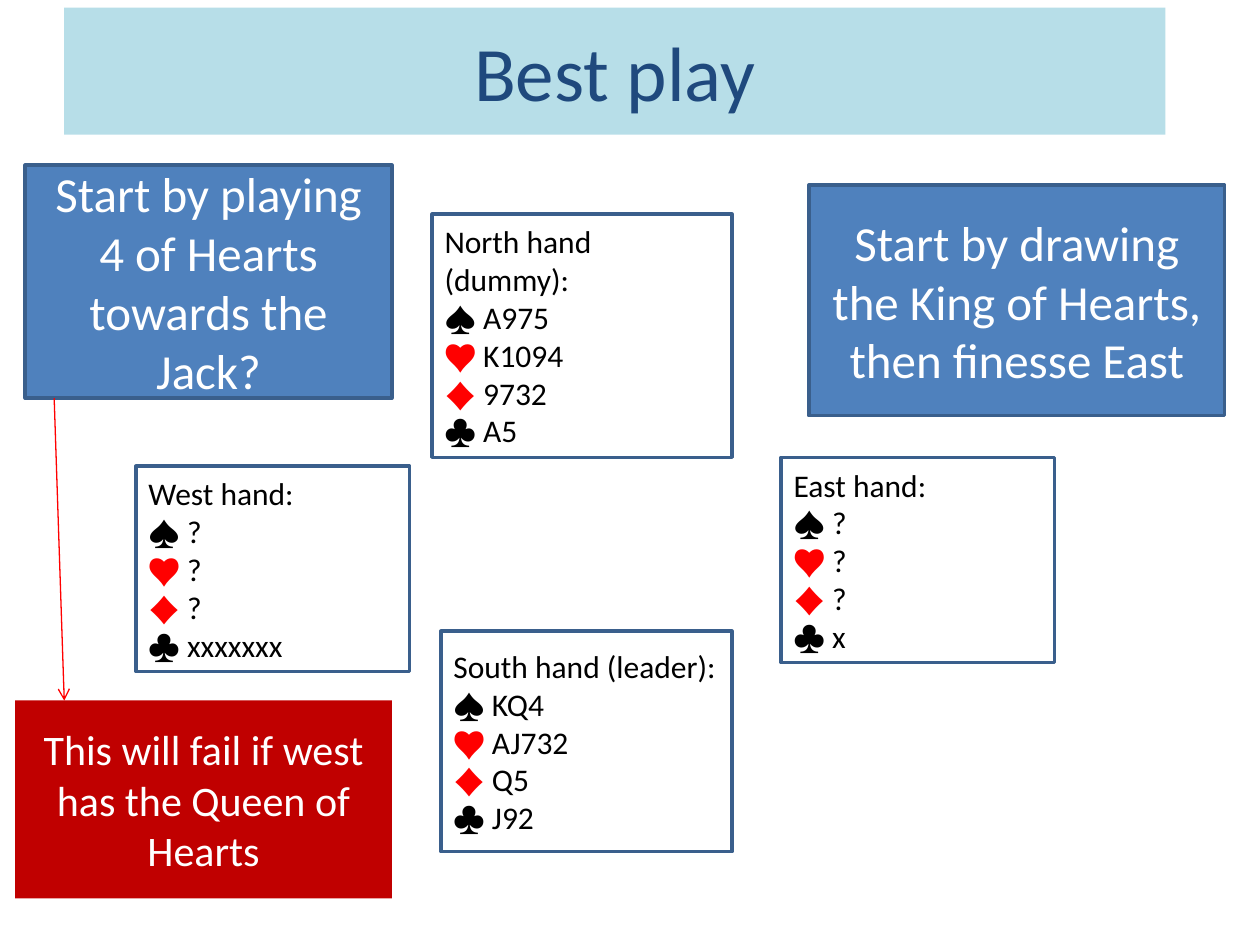
import pptx
import pptx.dml.color
import pptx.enum.shapes
import pptx.enum.text
import pptx.oxml
import pptx.oxml.ns
import pptx.util
from pptx.dml.color import RGBColor
from pptx.util import Inches

WHITE = RGBColor(0xFF, 0xFF, 0xFF)
BLACK = RGBColor(0x00, 0x00, 0x00)
RED = RGBColor(0xFF, 0x00, 0x00)
DARK_RED = RGBColor(0xC0, 0x00, 0x00)
BLUE = RGBColor(0x4F, 0x81, 0xBD)
OUTLINE_BLUE = RGBColor(0x3A, 0x5F, 0x8C)
PALE_BLUE = RGBColor(0xB7, 0xDE, 0xE8)
NAVY = RGBColor(0x1F, 0x49, 0x7D)

SUITS = (("♠", BLACK), ("♥", RED), ("♦", RED), ("♣", BLACK))

HANDS = (
    ("North hand (dummy):", ("A975", "K1094", "9732", "A5"), (3.43, 1.7, 2.38, 1.93)),
    ("South hand (leader):", ("KQ4", "AJ732", "Q5", "J92"), (3.5, 5.01, 2.31, 1.75)),
    ("West hand:", ("?", "?", "?", "xxxxxxx"), (1.08, 3.7, 2.17, 1.63)),
    ("East hand:", ("?", "?", "?", "x"), (6.2, 3.63, 2.17, 1.63)),
)


class SlideBuilder:
    font = "Calibri"
    hand_size = 18

    def __init__(self, slide):
        self.slide = slide

    def format_span(self, span, size, color):
        span.font.name = self.font
        span.font.size = pptx.util.Pt(size)
        span.font.color.rgb = color

    def write_centered(self, frame, text, size, color):
        frame.text = text
        frame.word_wrap = True
        frame.vertical_anchor = pptx.enum.text.MSO_ANCHOR.MIDDLE
        para = frame.paragraphs[0]
        para.alignment = pptx.enum.text.PP_ALIGN.CENTER
        self.format_span(para.runs[0], size, color)

    def title(self, text, bounds):
        title = self.slide.shapes.title
        title.left, title.top, title.width, title.height = map(Inches, bounds)
        title.fill.solid()
        title.fill.fore_color.rgb = PALE_BLUE
        self.write_centered(title.text_frame, text, 44, NAVY)

    def box(self, bounds, fill, outline=None):
        box = self.slide.shapes.add_shape(
            pptx.enum.shapes.MSO_SHAPE.RECTANGLE, *map(Inches, bounds)
        )
        box.shadow.inherit = False
        box.fill.solid()
        box.fill.fore_color.rgb = fill
        if outline is None:
            box.line.fill.background()
        else:
            box.line.color.rgb = outline
            box.line.width = pptx.util.Pt(2)
        return box

    def callout(self, text, bounds, size, fill, outline=None):
        box = self.box(bounds, fill, outline)
        self.write_centered(box.text_frame, text, size, WHITE)

    def hand(self, heading, holdings, bounds):
        frame = self.box(bounds, WHITE, OUTLINE_BLUE).text_frame
        frame.word_wrap = True
        frame.vertical_anchor = pptx.enum.text.MSO_ANCHOR.MIDDLE
        frame.text = heading
        self.format_span(frame.paragraphs[0].runs[0], self.hand_size, BLACK)
        for (suit, color), cards in zip(SUITS, holdings):
            para = frame.add_paragraph()
            for text, span_color in ((suit, color), (f" {cards}", BLACK)):
                span = para.add_run()
                span.text = text
                self.format_span(span, self.hand_size, span_color)
        for para in frame.paragraphs:
            para.alignment = pptx.enum.text.PP_ALIGN.LEFT

    def arrow(self, start, end):
        arrow = self.slide.shapes.add_connector(
            pptx.enum.shapes.MSO_CONNECTOR.STRAIGHT, *map(Inches, start + end)
        )
        arrow.line.color.rgb = RED
        arrow.line.width = pptx.util.Pt(0.75)
        namespace = pptx.oxml.ns.nsdecls("a")
        arrow.line._get_or_add_ln().append(
            pptx.oxml.parse_xml(f'<a:tailEnd {namespace} type="arrow"/>')
        )
        arrow._element.spPr.append(
            pptx.oxml.parse_xml(f"<a:effectLst {namespace}/>")
        )


def main():
    deck = pptx.Presentation()
    deck.slide_width = Inches(10)
    deck.slide_height = Inches(7.5)
    page = SlideBuilder(deck.slides.add_slide(deck.slide_layouts.get_by_name("Title Only")))
    page.title("Best play", (0.51, 0.06, 8.74, 1.01))
    for heading, holdings, bounds in HANDS:
        page.hand(heading, holdings, bounds)
    page.callout(
        "Start by drawing the King of Hearts, then finesse East",
        (6.42, 1.47, 3.3, 1.83), 28, BLUE, OUTLINE_BLUE,
    )
    page.callout(
        "Start by playing 4 of Hearts towards the Jack?",
        (0.2, 1.31, 2.91, 1.85), 28, BLUE, OUTLINE_BLUE,
    )
    page.callout(
        "This will fail if west has the Queen of Hearts",
        (0.12, 5.56, 2.99, 1.57), 24, DARK_RED,
    )
    page.arrow((0.43, 3.16), (0.51, 5.56))
    deck.save("out.pptx")


if __name__ == "__main__":
    main()
